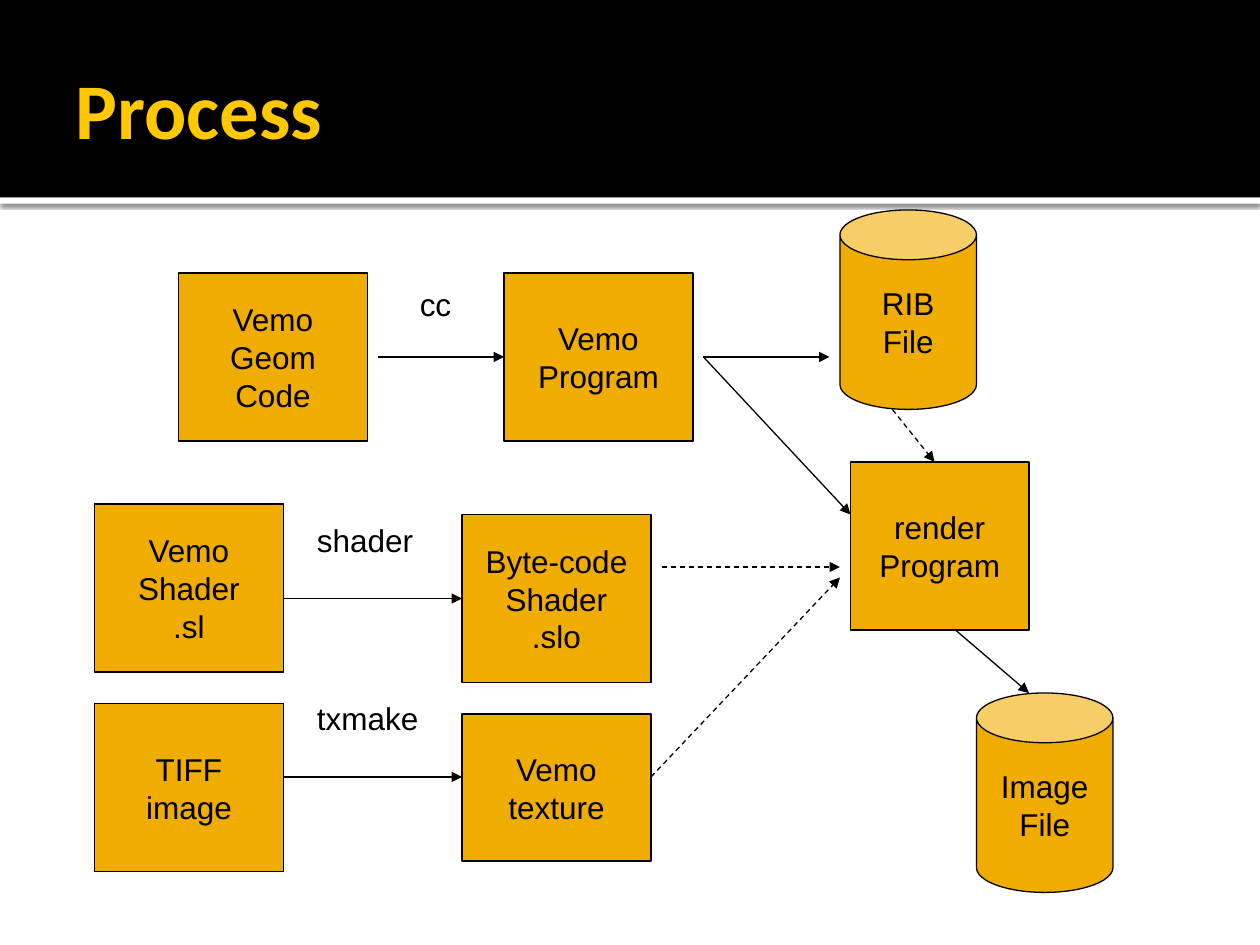
from lxml import etree
from pptx import Presentation
from pptx.dml.color import RGBColor
from pptx.enum.dml import MSO_LINE
from pptx.enum.shapes import MSO_CONNECTOR, MSO_SHAPE
from pptx.enum.text import MSO_ANCHOR, PP_ALIGN
from pptx.oxml import parse_xml
from pptx.oxml.ns import nsdecls, qn
from pptx.util import Pt

RECT, CAN = MSO_SHAPE.RECTANGLE, MSO_SHAPE.CAN
LINE, DASH = MSO_CONNECTOR.STRAIGHT, MSO_LINE.DASH
MID, TOP = MSO_ANCHOR.MIDDLE, MSO_ANCHOR.TOP
LEFT, CENTER = PP_ALIGN.LEFT, PP_ALIGN.CENTER
PX = 7620
COLORS = {"ink": "000000", "paper": "FFFFFF", "gold": "F0AD00", "title": "FFC800"}

NODES = [
    (RECT, 80, 60, 180, 160, ["Vemo", "Geom", "Code"]),
    (RECT, 390, 60, 180, 160, ["Vemo", "Program"]),
    (RECT, 0, 280, 180, 160, ["Vemo", "Shader", ".sl"]),
    (RECT, 350, 290, 180, 160, ["Byte-code", "Shader", ".slo"]),
    (RECT, 0, 470, 180, 160, ["TIFF", "image"]),
    (RECT, 350, 480, 180, 140, ["Vemo", "texture"]),
    (RECT, 720, 240, 170, 160, ["render", "Program"]),
    (CAN, 710, 0, 130, 190, ["RIB", "File"]),
    (CAN, 840, 460, 130, 190, ["Image", "File"]),
]
ARROWS = [
    (270, 140, 390, 140, False),
    (580, 140, 700, 140, False),
    (580, 140, 720, 290, False),
    (180, 370, 350, 370, False),
    (180, 540, 350, 540, False),
    (820, 400, 890, 460, False),
    (540, 340, 710, 340, True),
    (530, 540, 710, 350, True),
    (760, 190, 800, 240, True),
]
LABELS = [(298, 66, 60, "cc"), (200, 290, 128, "shader"), (200, 460, 142, "txmake")]


def color(name):
    """Return the named colour."""
    return RGBColor.from_string(COLORS[name])


def scale(*sizes):
    """Turn px lengths into EMU."""
    return [size * PX for size in sizes]


def write(shape, lines, align, anchor, size=18, font="Arial", ink="ink", bold=False):
    """Write one paragraph per line into a shape."""
    frame = shape.text_frame
    frame.vertical_anchor = anchor
    frame.word_wrap = False
    for i, line in enumerate(lines):
        para = frame.paragraphs[0] if i == 0 else frame.add_paragraph()
        para.alignment = align
        run = para.add_run()
        run.text = line
        run.font.size = Pt(size)
        run.font.name = font
        run.font.bold = bold
        run.font.color.rgb = color(ink)


def block(slide, kind, box, fill, edge=None):
    """Add a filled shape with an optional outline."""
    shape = slide.shapes.add_shape(kind, *scale(*box))
    shape.shadow.inherit = False
    shape.fill.solid()
    shape.fill.fore_color.rgb = color(fill)
    if edge:
        shape.line.color.rgb = color(edge)
        shape.line.width = Pt(0.75)
    else:
        shape.line.fill.background()
    return shape


def arrow(slide, ends, dashed):
    """Add a line with a triangle at its end."""
    line = slide.shapes.add_connector(LINE, *scale(*ends))
    line.line.color.rgb = color("ink")
    line.line.width = Pt(0.75)
    if dashed:
        line.line.dash_style = DASH
    outline = line._element.spPr.find(qn("a:ln"))
    etree.SubElement(outline, qn("a:tailEnd"), type="triangle")
    etree.SubElement(line._element.spPr, qn("a:effectLst"))


def label(slide, box, text, align, anchor, **style):
    """Add a single line of free text."""
    shape = slide.shapes.add_textbox(*scale(*box))
    write(shape, [text], align, anchor, **style)


def header(slide, x, y, w, h):
    """Draw the title band with its shadowed rule."""
    rule = block(slide, RECT, (x, y + h, w, 6), "paper")
    rule._element.spPr.find(qn("a:effectLst")).append(parse_xml(
        f'<a:outerShdw {nsdecls("a")} blurRad="{Pt(2.5)}" dist="{Pt(0.8)}" dir="5400000">'
        f'<a:srgbClr val="{COLORS["ink"]}"><a:alpha val="60000"/></a:srgbClr></a:outerShdw>'))
    block(slide, RECT, (x, y, w, h), "ink")
    label(slide, (x + 60, y + 20, w - 120, h - 23), "Process", LEFT, MID,
          size=45, font="Calibri", ink="title", bold=True)


def flow(slide, x, y):
    """Draw the render pipeline from its top left corner."""
    for kind, dx, dy, w, h, lines in NODES:
        node = block(slide, kind, (x + dx, y + dy, w, h), "gold", "ink")
        if kind == CAN:
            node.adjustments[0] = 0.365
        write(node, lines, CENTER, MID)
    for x1, y1, x2, y2, dashed in ARROWS:
        arrow(slide, (x + x1, y + y1, x + x2, y + y2), dashed)
    for dx, dy, w, text in LABELS:
        label(slide, (x + dx, y + dy, w, 60), text, LEFT, TOP)


def main():
    """Build and save the slide."""
    deck = Presentation()
    deck.slide_width, deck.slide_height = scale(1200, 900)
    slide = deck.slides.add_slide(deck.slide_layouts[6])
    header(slide, 0, 0, 1200, 188)
    flow(slide, 90, 200)
    deck.save("out.pptx")


if __name__ == "__main__":
    main()
